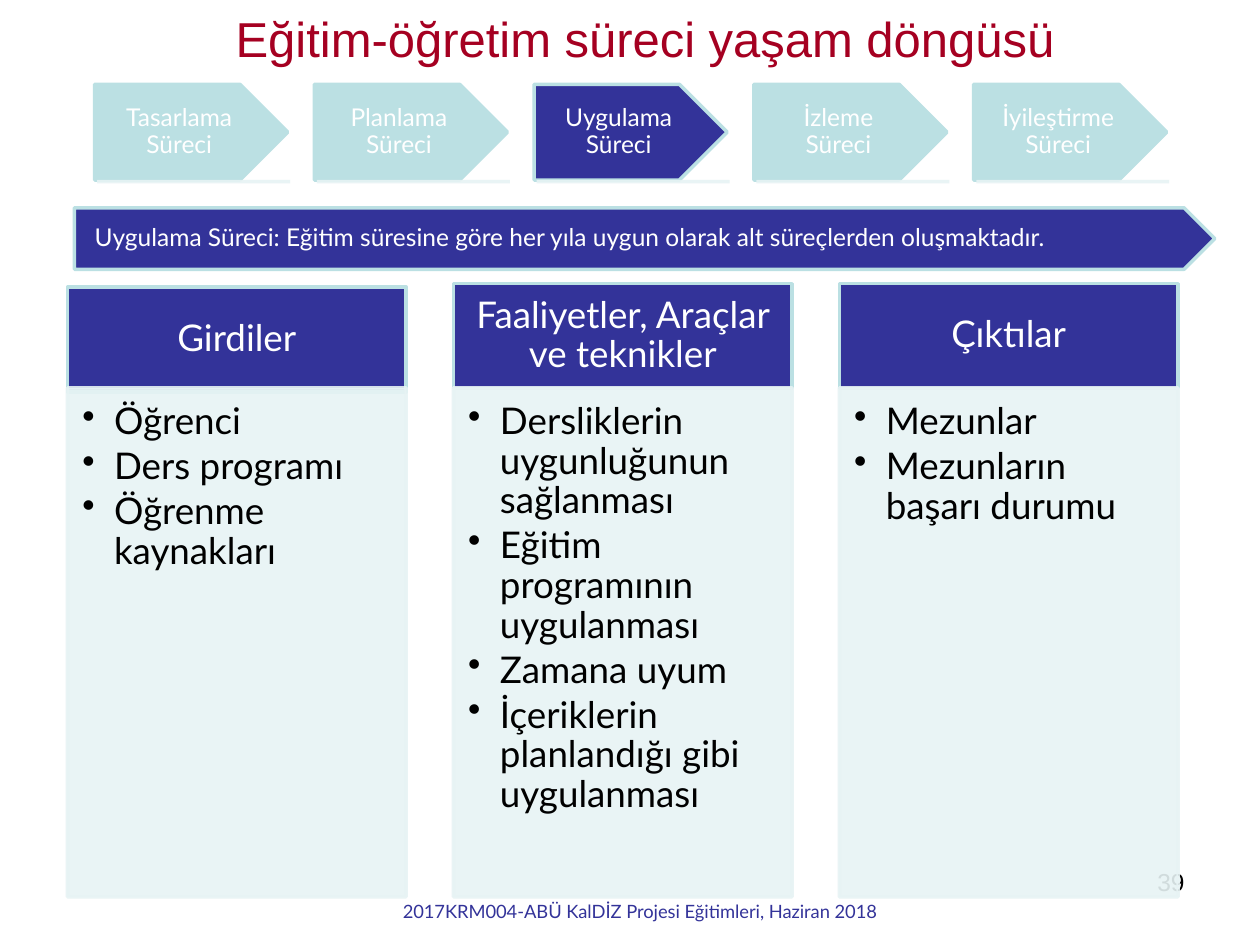
"""Build the slide on the life cycle of the teaching process."""
from lxml.etree import SubElement
from pptx import Presentation
from pptx.dml.color import RGBColor
from pptx.enum.shapes import MSO_CONNECTOR as CONN, MSO_SHAPE as SHAPE
from pptx.enum.text import MSO_ANCHOR as ANCHOR, PP_ALIGN as ALIGN
from pptx.oxml.ns import qn
from pptx.util import Cm, Pt

COLORS = {"navy": "333399", "aqua": "BBE0E3", "pale": "E7F3F4",
          "red": "A50021", "white": "FFFFFF", "black": "000000"}
STAGES = ["Tasarlama Süreci", "Planlama Süreci", "Uygulama Süreci",
          "İzleme Süreci", "İyileştirme Süreci"]
ACTIVE = "Uygulama Süreci"
COLUMNS = [
    ("Girdiler", 5.79, ["Öğrenci", "Ders programı", "Öğrenme kaynakları"]),
    ("Faaliyetler, Araçlar ve teknikler", 5.72,
     ["Dersliklerin uygunluğunun sağlanması", "Eğitim programının uygulanması",
      "Zamana uyum", "İçeriklerin planlandığı gibi uygulanması"]),
    ("Çıktılar", 5.72, ["Mezunlar", "Mezunların başarı durumu"]),
]


def paint(sp, line, fill=None, alpha=None):
    sp.line.color.rgb = RGBColor.from_string(COLORS[line])
    sp.line.width = Pt(2)
    if fill:
        sp.shadow.inherit = False
        sp.fill.solid()
        sp.fill.fore_color.rgb = RGBColor.from_string(COLORS[fill])
    if alpha:
        for color in sp._element.spPr.iter(qn("a:srgbClr")):
            SubElement(color, qn("a:alpha")).set("val", str(alpha * 1000))


def write(sp, lines, size, color, font="Lato", align=ALIGN.CENTER, anchor=ANCHOR.MIDDLE,
          insets=(0.25, 0.13, 0.25, 0.13), wrap=True, spacing=0.9, after=0):
    tf = sp.text_frame
    tf.word_wrap = wrap
    tf.vertical_anchor = anchor
    tf.margin_left, tf.margin_top, tf.margin_right, tf.margin_bottom = map(Cm, insets)
    tf.text = "\n".join(lines)
    for p in tf.paragraphs:
        p.alignment = align
        p.line_spacing = spacing
        p.space_after = Pt(after)
        p.font.size = Pt(size)
        p.font.name = font
        p.font.color.rgb = RGBColor.from_string(COLORS[color])


prs = Presentation()
prs.slide_width, prs.slide_height = Cm(25.4), Cm(19.05)
s = prs.slides.add_slide(prs.slide_layouts[6])

number = s.shapes.add_textbox(Cm(18.21), Cm(17.35), Cm(5.92), Cm(1.32))
write(number, ["39"], 14, "black", "Arial", ALIGN.RIGHT, ANCHOR.TOP, spacing=1)

for i, stage in enumerate(STAGES):
    left = 1.91 + 4.43 * i
    sp = s.shapes.add_shape(SHAPE.PENTAGON, Cm(left), Cm(1.7), Cm(3.89), Cm(1.93))
    paint(sp, "aqua", "navy" if stage == ACTIVE else "aqua")
    write(sp, [stage], 14, "white", insets=(0.28, 0.15, 0.28, 0.15))
    rule = s.shapes.add_connector(CONN.STRAIGHT, Cm(left + 0.05), Cm(3.66),
                                  Cm(left + 3.94), Cm(3.66))
    paint(rule, "pale", alpha=90)
    SubElement(rule._element.spPr, qn("a:effectLst"))

for i, (heading, top, items) in enumerate(COLUMNS):
    left = Cm(1.36 + 7.78 * i)
    header = s.shapes.add_shape(SHAPE.RECTANGLE, left, Cm(top), Cm(6.83), Cm(2.11))
    paint(header, "aqua", "navy")
    write(header, [heading], 21, "white", insets=(0.4, 0.23, 0.4, 0.23))
    body = s.shapes.add_shape(SHAPE.RECTANGLE, left, Cm(7.82), Cm(6.83), Cm(10.26))
    paint(body, "pale", "pale", 90)
    write(body, items, 21, "black", align=ALIGN.LEFT, anchor=ANCHOR.TOP,
          insets=(0.3, 0.3, 0.4, 0.45), after=3)
    for p in body.text_frame.paragraphs:
        pPr = p._p.get_or_add_pPr()
        pPr.set("marL", str(Cm(0.64)))
        pPr.set("indent", str(-Cm(0.64)))
        bullet = pPr.makeelement(qn("a:buChar"), {"char": "•"})
        pPr.insert_element_before(bullet, "a:tabLst", "a:defRPr", "a:extLst")

banner = s.shapes.add_shape(SHAPE.PENTAGON, Cm(1.5), Cm(4.19), Cm(22.99), Cm(1.24))
paint(banner, "aqua", "navy")
write(banner, ["Uygulama Süreci: Eğitim süresine göre her yıla uygun olarak "
               "alt süreçlerden oluşmaktadır."],
      14, "white", align=ALIGN.LEFT, insets=(0.41, 0.15, 0.28, 0.15))

footer = s.shapes.add_textbox(Cm(7.29), Cm(18.01), Cm(11.23), Cm(0.79))
write(footer, ["2017KRM004-ABÜ KalDİZ Projesi Eğitimleri, Haziran 2018"],
      10.5, "navy", anchor=ANCHOR.TOP, spacing=1)

title = s.shapes.add_textbox(Cm(4.5), Cm(0.05), Cm(17.5), Cm(1.45))
write(title, ["Eğitim-öğretim süreci yaşam döngüsü"], 28, "red", "Arial",
      ALIGN.LEFT, ANCHOR.TOP, wrap=False, spacing=1)

prs.save("out.pptx")
